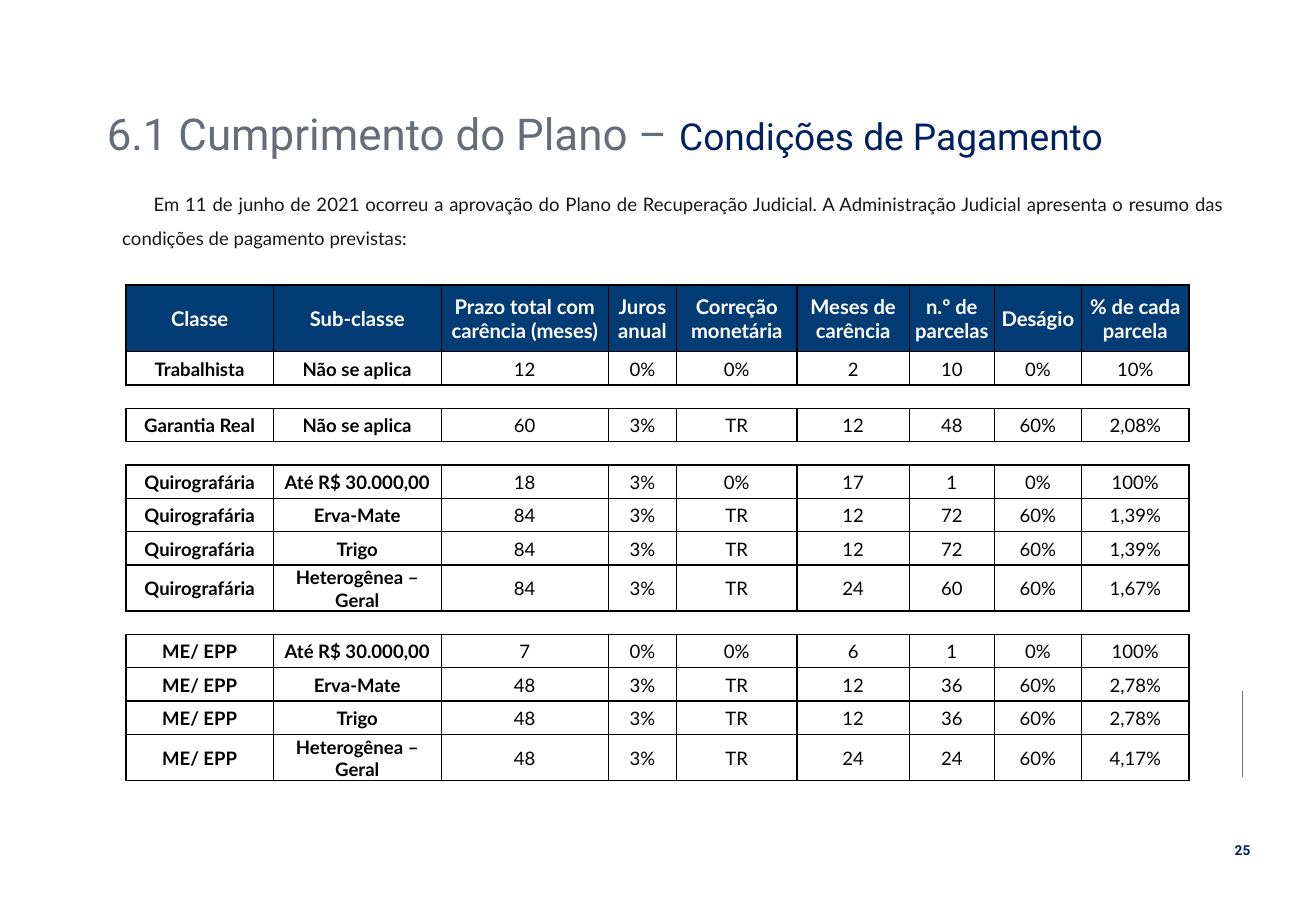
from lxml import etree
from pptx import Presentation
from pptx.dml.color import RGBColor
from pptx.enum.shapes import MSO_CONNECTOR
from pptx.enum.text import MSO_ANCHOR, MSO_AUTO_SIZE, PP_ALIGN
from pptx.oxml.ns import qn
from pptx.util import Pt

PX = 3810
TITLE_ONLY = 5
STRAIGHT = MSO_CONNECTOR.STRAIGHT
MIDDLE, TOP = MSO_ANCHOR.MIDDLE, MSO_ANCHOR.TOP
NO_FIT = MSO_AUTO_SIZE.NONE
LEFT, CENTER, JUSTIFY = PP_ALIGN.LEFT, PP_ALIGN.CENTER, PP_ALIGN.JUSTIFY

GREY = RGBColor(0x65, 0x6D, 0x78)
NAVY = RGBColor(0x00, 0x20, 0x60)
HEADER_BLUE = RGBColor(0x03, 0x3C, 0x75)
INK = RGBColor(0x18, 0x17, 0x17)
BLACK = RGBColor(0x00, 0x00, 0x00)
WHITE = RGBColor(0xFF, 0xFF, 0xFF)

HEADINGS = [
    "Classe", "Sub-classe", "Prazo total com\ncarência (meses)", "Juros\nanual",
    "Correção\nmonetária", "Meses de\ncarência", "n.º de\nparcelas", "Deságio",
    "% de cada\nparcela",
]
GROUPS = [
    [("Trabalhista", "Não se aplica", "12", "0%", "0%", "2", "10", "0%", "10%")],
    [("Garantia Real", "Não se aplica", "60", "3%", "TR", "12", "48", "60%", "2,08%")],
    [
        ("Quirografária", "Até R$ 30.000,00", "18", "3%", "0%", "17", "1", "0%", "100%"),
        ("Quirografária", "Erva-Mate", "84", "3%", "TR", "12", "72", "60%", "1,39%"),
        ("Quirografária", "Trigo", "84", "3%", "TR", "12", "72", "60%", "1,39%"),
        ("Quirografária", "Heterogênea – Geral", "84", "3%", "TR", "24", "60", "60%", "1,67%"),
    ],
    [
        ("ME/ EPP", "Até R$ 30.000,00", "7", "0%", "0%", "6", "1", "0%", "100%"),
        ("ME/ EPP", "Erva-Mate", "48", "3%", "TR", "12", "36", "60%", "2,78%"),
        ("ME/ EPP", "Trigo", "48", "3%", "TR", "12", "36", "60%", "2,78%"),
        ("ME/ EPP", "Heterogênea – Geral", "48", "3%", "TR", "24", "24", "60%", "4,17%"),
    ],
]
COLUMN_WIDTHS = [291, 332, 330, 135, 238, 222, 168, 172, 213]
HEADER_HEIGHT, ROW_HEIGHT, TALL_HEIGHT, GAP_HEIGHT = 132, 66, 91, 46
LABEL_COLUMNS = 2


class PlanPage:
    text_font = "Lato"
    title_font = "Roboto"

    def __init__(self, deck):
        self.page = deck.slides.add_slide(deck.slide_layouts[TITLE_ONLY])

    def style(self, font, name, size, color, bold=False):
        font.name, font.size, font.bold = name, Pt(size), bold
        font.color.rgb = color

    def title(self, left, top, width, height, spans):
        box = self.page.shapes.title
        box.left, box.top, box.width, box.height = (
            v * PX for v in (left, top, width, height))
        frame = box.text_frame
        frame.auto_size, frame.word_wrap = NO_FIT, True
        frame.vertical_anchor = MIDDLE
        para = frame.paragraphs[0]
        para.alignment, para.line_spacing = LEFT, 0.9
        for text, size, color in spans:
            span = para.add_run()
            span.text = text
            self.style(span.font, self.title_font, size, color)

    def text(self, left, top, width, height, text, name, size, color,
             bold=False, align=CENTER, wrap=False, spacing=1.0, margin=0, indent=0):
        box = self.page.shapes.add_textbox(*(v * PX for v in (left, top, width, height)))
        frame = box.text_frame
        frame.word_wrap, frame.vertical_anchor = wrap, TOP
        para = frame.paragraphs[0]
        para.text, para.alignment, para.line_spacing = text, align, spacing
        properties = para._p.get_or_add_pPr()
        properties.set("marL", str(margin * PX))
        properties.set("indent", str(indent * PX))
        self.style(para.font, name, size, color, bold)

    def line(self, x1, y1, x2, y2, color, weight):
        rule = self.page.shapes.add_connector(STRAIGHT, *(v * PX for v in (x1, y1, x2, y2)))
        rule.line.color.rgb, rule.line.width = color, Pt(weight)
        etree.SubElement(rule._element.spPr, qn("a:effectLst"))

    def border(self, cell, side, visible):
        edge = etree.SubElement(cell._tc.get_or_add_tcPr(), qn("a:ln" + side))
        edge.set("w", str(Pt(1)))
        if visible:
            fill = etree.SubElement(edge, qn("a:solidFill"))
            etree.SubElement(fill, qn("a:srgbClr")).set("val", str(BLACK))
        else:
            etree.SubElement(edge, qn("a:noFill"))

    def cell(self, cell, text, size, color, bold, fill=None):
        cell.text, cell.vertical_anchor = text, MIDDLE
        cell.margin_left = cell.margin_right = cell.margin_top = 2 * PX
        cell.margin_bottom = 0
        for para in cell.text_frame.paragraphs:
            para.alignment = CENTER
            self.style(para.font, self.text_font, size, color, bold)
        for side in "LRTB":
            self.border(cell, side, bool(text) or side in "TB")
        if fill is None:
            cell.fill.background()
        else:
            cell.fill.solid()
            cell.fill.fore_color.rgb = fill

    def table(self, left, top, headings, groups):
        rows = [(HEADER_HEIGHT, headings)]
        for number, group in enumerate(groups):
            if number:
                rows.append((GAP_HEIGHT, [""] * len(headings)))
            for values in group:
                tall = values[1].startswith("Heterogênea")
                rows.append((TALL_HEIGHT if tall else ROW_HEIGHT, values))
        height = sum(row_height for row_height, _ in rows)
        table = self.page.shapes.add_table(
            len(rows), len(headings), left * PX, top * PX,
            sum(COLUMN_WIDTHS) * PX, height * PX).table
        table.first_row = table.horz_banding = False
        for column, width in zip(table.columns, COLUMN_WIDTHS):
            column.width = width * PX
        for r, (row_height, values) in enumerate(rows):
            table.rows[r].height = row_height * PX
            for c, value in enumerate(values):
                if r == 0:
                    self.cell(table.cell(r, c), value, 12, WHITE, True, HEADER_BLUE)
                else:
                    size = 11 if value else 8
                    self.cell(table.cell(r, c), value, size, BLACK, c < LABEL_COLUMNS)


def main():
    deck = Presentation()
    deck.slide_width, deck.slide_height = 2600 * PX, 1800 * PX
    plan = PlanPage(deck)
    plan.line(2455, 1366, 2455, 1536, GREY, 0.5)
    plan.text(2414, 1651, 82, 58, "25", plan.title_font, 8.1, NAVY, bold=True)
    plan.title(187, 206, 2119, 127, [
        ("6.1 Cumprimento do Plano – ", 26, GREY),
        ("Condições de Pagamento", 22, NAVY),
    ])
    plan.text(
        187, 348, 2256, 151,
        "Em 11 de junho de 2021 ocorreu a aprovação do Plano de Recuperação Judicial. "
        "A Administração Judicial apresenta o resumo das condições de pagamento previstas:",
        plan.text_font, 11, INK, align=JUSTIFY, wrap=True, spacing=1.5, margin=31, indent=62)
    plan.table(249, 563, HEADINGS, GROUPS)
    deck.save("out.pptx")


if __name__ == "__main__":
    main()
